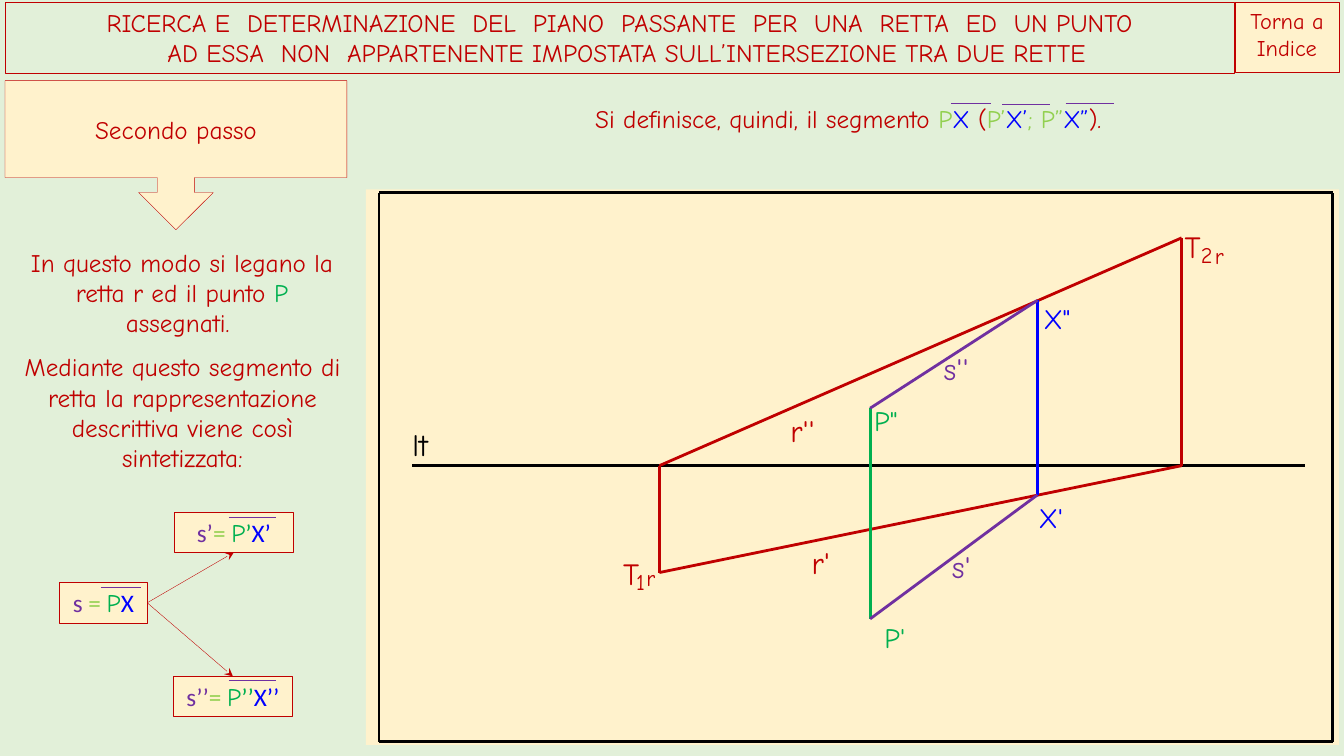
from lxml import etree
from pptx import Presentation
from pptx.dml.color import RGBColor
from pptx.enum.shapes import MSO_CONNECTOR, MSO_SHAPE
from pptx.enum.text import MSO_ANCHOR, MSO_AUTO_SIZE, PP_ALIGN
from pptx.oxml.ns import qn
from pptx.util import Emu, Pt

PX = 9144  # EMU per px, 100 px to the inch
RECT, CALLOUT = MSO_SHAPE.RECTANGLE, MSO_SHAPE.DOWN_ARROW_CALLOUT
STRAIGHT = MSO_CONNECTOR.STRAIGHT
TOP, MIDDLE = MSO_ANCHOR.TOP, MSO_ANCHOR.MIDDLE
LEFT, CENTER = PP_ALIGN.LEFT, PP_ALIGN.CENTER
NO_FIT, GROW = MSO_AUTO_SIZE.NONE, MSO_AUTO_SIZE.SHAPE_TO_FIT_TEXT
COMIC, CALIBRI = "Comic Neue", "Calibri"

PALE_GREEN = RGBColor(0xE2, 0xF0, 0xD9)
CREAM = RGBColor(0xFF, 0xF2, 0xCC)
RED = RGBColor(0xC0, 0x00, 0x00)
GREEN = RGBColor(0x00, 0xB0, 0x50)
LIME = RGBColor(0x92, 0xD0, 0x50)
BLUE = RGBColor(0x00, 0x00, 0xFF)
PURPLE = RGBColor(0x70, 0x30, 0xA0)
BLACK = RGBColor(0x00, 0x00, 0x00)

deck = Presentation()
deck.slide_width, deck.slide_height = Emu(1333 * PX), Emu(750 * PX)
page = deck.slides.add_slide(deck.slide_layouts[6])
page.background.fill.solid()
page.background.fill.fore_color.rgb = PALE_GREEN


def add_box(place, paragraphs, size=18, fill=None, border=None, kind=RECT,
            anchor=TOP, align=CENTER, label=False, fit=GROW):
    """Add a shape whose paragraphs are lists of (text, colour, font) runs."""
    box = page.shapes.add_shape(kind, *(Emu(n * PX) for n in place))
    box.shadow.inherit = False
    if fill is None:
        box.fill.background()
    else:
        box.fill.solid()
        box.fill.fore_color.rgb = fill
    if border is None:
        box.line.fill.background()
    else:
        box.line.color.rgb = border
        box.line.width = Pt(0.25)
    frame = box.text_frame
    frame.word_wrap = not label
    frame.auto_size = fit
    frame.vertical_anchor = anchor
    if label:
        frame.margin_left = frame.margin_right = 0
        frame.margin_top = frame.margin_bottom = 0
    for number, runs in enumerate(paragraphs):
        para = frame.add_paragraph() if number else frame.paragraphs[0]
        para.alignment = align
        for text, colour, font in runs:
            span = para.add_run()
            span.text = text
            span.font.size = Pt(size)
            span.font.name = font
            span.font.color.rgb = colour
    return box


def add_line(start, end, colour, width=0, arrow=False):
    line = page.shapes.add_connector(
        STRAIGHT, *(Emu(n * PX) for n in (*start, *end)))
    line.line.color.rgb = colour
    line.line.width = Pt(width)
    if arrow:
        etree.SubElement(line.line._get_or_add_ln(), qn("a:tailEnd"), type="stealth")
    etree.SubElement(line._element.spPr, qn("a:effectLst"))


# Header and step callout
add_box((5, 80, 339, 148), [[("Secondo passo", RED, COMIC)]], fill=CREAM,
        border=RED, kind=CALLOUT, anchor=MIDDLE, fit=NO_FIT)
title = add_box((5, 2, 1219, 71), [
    [("RICERCA E  DETERMINAZIONE  DEL  PIANO  PASSANTE  PER  UNA  RETTA  ED  UN PUNTO", RED, COMIC)],
    [("AD ESSA  NON  APPARTENENTE IMPOSTATA SULL’INTERSEZIONE TRA DUE RETTE", RED, COMIC)],
], border=RED)
second_line = title.text_frame.paragraphs[1]
second_line._p.get_or_add_pPr().set("marL", str(14 * PX))
add_box((1225, 2, 103, 70), [[("Torna a Indice", RED, COMIC)]], 16, CREAM, RED)

# Explanations
add_box((11, 240, 339, 101), [[
    ("In questo modo si legano la retta r ed il punto ", RED, COMIC),
    ("P", GREEN, COMIC), (" assegnati. ", RED, COMIC)]])
add_box((5, 344, 352, 131), [[
    ("Mediante questo segmento di retta la rappresentazione descrittiva "
     "viene così sintetizzata:", RED, COMIC)]])
add_box((363, 98, 965, 40), [[
    ("Si definisce, quindi, il segmento ", RED, COMIC),
    ("P", LIME, COMIC), ("X ", BLUE, COMIC), ("(", RED, COMIC),
    ("P’", LIME, COMIC), ("X’", BLUE, COMIC),
    ("; P”", LIME, COMIC), ("X”", BLUE, COMIC), ("). ", RED, COMIC)]])

# Drawing panel and its labels
add_box((363, 188, 965, 551), [], fill=CREAM, fit=NO_FIT)
LABEL_HEIGHT = {22: 37, 20: 34, 16: 27}
for text, left, top, width, size, colour in [
    ("lt", 409, 422, 32, 22, BLACK),
    ("P'", 877, 616, 25, 20, GREEN),
    ('P"', 867, 400, 26, 20, GREEN),
    ('X"', 1035, 299, 32, 20, BLUE),
    ("X'", 1030, 497, 31, 20, BLUE),
    ("T", 1175, 226, 21, 22, RED),
    ("2", 1191, 239, 14, 16, RED),
    ("r", 1205, 240, 11, 16, RED),
    ("T", 618, 550, 21, 22, RED),
    ("1", 631, 564, 10, 16, RED),
    ("r", 641, 560, 11, 16, RED),
    ("r'", 805, 539, 27, 22, RED),
    ("r''", 784, 408, 39, 22, RED),
    ("s''", 936, 347, 39, 22, PURPLE),
    ("s'", 944, 543, 27, 22, PURPLE),
]:
    add_box((left, top, width, LABEL_HEIGHT[size]), [[(text, colour, COMIC)]],
            size, CREAM, align=LEFT, label=True)

# Frame of the drawing
corners = [(376, 736), (1322, 736), (1322, 191), (376, 191)]
for start, end in zip(corners, corners[1:] + corners[:1]):
    add_line(start, end, BLACK)

# Ground line, line r, point P, point X and segment s
T1, T1_GROUND = (654, 568), (654, 462)
T2, T2_GROUND = (1172, 236), (1172, 462)
P1, P2 = (863, 614), (863, 405)
X1, X2 = (1029, 491), (1029, 298)
for start, end, colour in [
    ((409, 462), (1294, 462), BLACK),
    (T1_GROUND, T1, RED),
    (T2, T2_GROUND, RED),
    (T1_GROUND, T2, RED),
    (T2_GROUND, T1, RED),
    (P2, P1, GREEN),
    (X2, X1, BLUE),
    (X2, P2, PURPLE),
    (X1, P1, PURPLE),
]:
    add_line(start, end, colour)

# Summary scheme
for end in [(232, 548), (231, 671)]:
    add_line((146, 598), end, RED, 0.25, arrow=True)
for place, name, mark in [
    ((59, 578, 87, 40), "s ", ""),
    ((172, 671, 118, 40), "s’’", "’’"),
    ((173, 508, 118, 40), "s’", "’"),
]:
    runs = [(name, PURPLE, CALIBRI), ("= ", LIME, CALIBRI), ("P", GREEN, COMIC)]
    if mark:
        runs.append((mark, GREEN, CALIBRI))
    runs.append(("X" + mark, BLUE, CALIBRI))
    add_box(place, [runs], fill=CREAM, border=RED, anchor=MIDDLE)

# Bars over the segment names
for left, right, top in [
    (943, 983, 103), (994, 1041, 104), (1057, 1105, 103),
    (100, 140, 583), (227, 274, 675), (227, 274, 513),
]:
    add_line((left, top), (right, top), PURPLE, 0.5)

deck.save("out.pptx")
